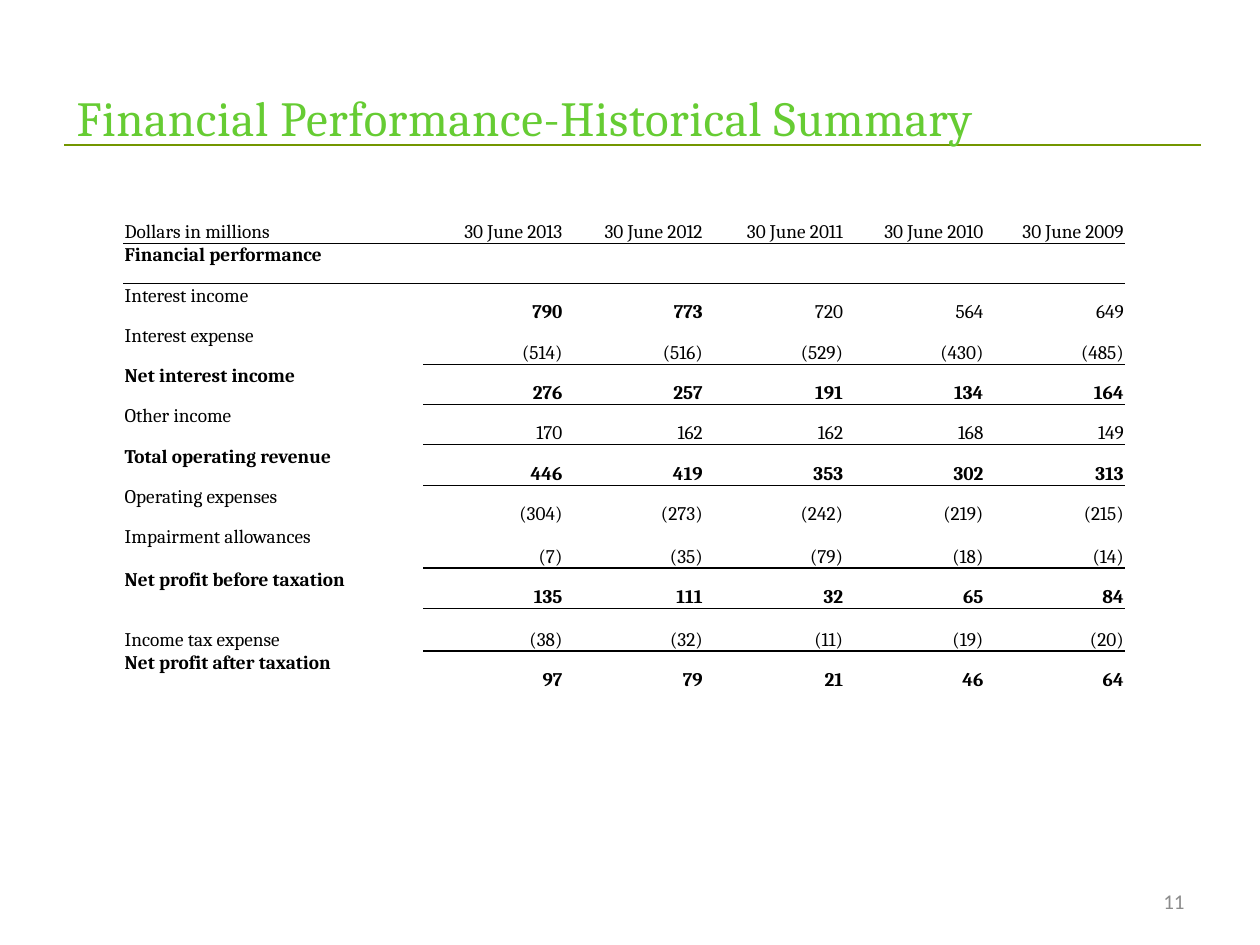
from dataclasses import dataclass

from lxml.etree import SubElement
from pptx import Presentation
from pptx.dml.color import RGBColor
from pptx.enum.shapes import MSO_CONNECTOR
from pptx.enum.text import MSO_ANCHOR, PP_ALIGN
from pptx.oxml.ns import qn
from pptx.util import Inches, Pt

COLORS = {"title": "66CC33", "rule": "739600", "ink": "000000", "page": "8C8C8C"}
WIDE, HIGH = Inches(10), Inches(7.5)
PLAIN = "{2D5ABB26-0587-4C30-8999-92F81FD0307C}"
COLS = [0.238] + [0.1114] * 5
ALL, LEAD, NONE = range(6), range(1, 3), range(0)


@dataclass
class Row:
    label: str
    vals: tuple = ("",) * 5
    bold: range = NONE
    rule: float = 0
    start: int = 1
    low: bool = False
    high: float = 0.32


@dataclass
class Label:
    text: str
    left: float
    top: float
    wide: float
    high: float
    size: float
    font: str
    color: str
    align: PP_ALIGN
    base: float = 0.05
    space: int = 0


ROWS = [
    Row("Dollars in millions", tuple(f"30 June {year}" for year in range(2013, 2008, -1)),
        rule=0.5, start=0, low=True, high=0.38),
    Row("Financial performance", bold=ALL),
    Row("Interest income", ("790", "773", "720", "564", "649"), LEAD),
    Row("Interest expense", ("(514)", "(516)", "(529)", "(430)", "(485)"), rule=0.5),
    Row("Net interest income", ("276", "257", "191", "134", "164"), ALL),
    Row("Other income", ("170", "162", "162", "168", "149"), rule=0.5),
    Row("Total operating revenue", ("446", "419", "353", "302", "313"), ALL),
    Row("Operating expenses", ("(304)", "(273)", "(242)", "(219)", "(215)")),
    Row("Impairment allowances", ("(7)", "(35)", "(79)", "(18)", "(14)"), rule=1, high=0.34),
    Row("Net profit before taxation", ("135", "111", "32", "65", "84"), ALL),
    Row("Income tax expense", ("(38)", "(32)", "(11)", "(19)", "(20)"),
        rule=1, low=True, high=0.34),
    Row("Net profit after taxation", ("97", "79", "21", "46", "64"), ALL),
]

LABELS = [
    Label("Financial Performance-Historical Summary", 0.051, 0.07, 0.898, 0.167,
          28, "Cambria", "title", PP_ALIGN.LEFT, 0.49, 40),
    Label("11", 0.717, 0.927, 0.233, 0.053, 12, "Calibri", "page", PP_ALIGN.RIGHT),
]


def across(share: float) -> int:
    return round(WIDE * share)


def down(share: float) -> int:
    return round(HIGH * share)


def style(font, name: str, size: float, color: str, bold: bool = False) -> None:
    font.name, font.size, font.bold = name, Pt(size), bold
    font.color.rgb = RGBColor.from_string(COLORS[color])


def draw_label(slide, item: Label) -> None:
    box = slide.shapes.add_textbox(across(item.left), down(item.top),
                                   across(item.wide), down(item.high))
    frame = box.text_frame
    frame.text = item.text
    frame.word_wrap = True
    frame.vertical_anchor = MSO_ANCHOR.MIDDLE
    frame.margin_bottom = Inches(item.base)
    line = frame.paragraphs[0]
    line.alignment = item.align
    for run in line.runs:
        style(run.font, item.font, item.size, item.color)
        if item.space:
            run.font._element.set("spc", str(item.space))


def draw_rule(slide) -> None:
    rule = slide.shapes.add_connector(MSO_CONNECTOR.STRAIGHT, across(0.051), down(0.1535),
                                      across(0.953), down(0.1535))
    rule.line.color.rgb = RGBColor.from_string(COLORS["rule"])
    rule.line.width = Pt(0.75)
    SubElement(rule._element.spPr, qn("a:effectLst"))


def draw_edge(cell, side: str, width: float) -> None:
    edge = SubElement(cell._tc.get_or_add_tcPr(), qn(f"a:{side}"), w=str(Pt(width)))
    fill = SubElement(edge, qn("a:solidFill"))
    SubElement(fill, qn("a:srgbClr"), val=COLORS["ink"])


def fill_cell(cell, text: str, col: int, row: Row) -> None:
    cell.margin_left = cell.margin_right = cell.margin_top = Inches(0.01)
    cell.margin_bottom = 0
    cell.vertical_anchor = MSO_ANCHOR.BOTTOM if col or row.low else MSO_ANCHOR.TOP
    cell.text_frame.text = text
    line = cell.text_frame.paragraphs[0]
    line.alignment = PP_ALIGN.RIGHT if col else PP_ALIGN.LEFT
    for run in line.runs:
        style(run.font, "Cambria", 11, "ink", col in row.bold)
    if not text:
        SubElement(line._p, qn("a:endParaRPr"), sz="1100")


def draw_table(slide, rows: list[Row]) -> None:
    frame = slide.shapes.add_table(len(rows), len(COLS), across(0.098), down(0.2067),
                                   across(sum(COLS)), Inches(sum(row.high for row in rows)))
    table = frame.table
    table.first_row = table.horz_banding = False
    table._tbl.tblPr.find(qn("a:tableStyleId")).text = PLAIN
    for col, share in zip(table.columns, COLS):
        col.width = across(share)
    above = Row("")
    for at, row in enumerate(rows):
        table.rows[at].height = Inches(row.high)
        for col, text in enumerate((row.label, *row.vals)):
            cell = table.cell(at, col)
            fill_cell(cell, text, col, row)
            for side, owner in (("lnT", above), ("lnB", row)):
                if owner.rule and col >= owner.start:
                    draw_edge(cell, side, owner.rule)
            cell.fill.background()
        above = row


def main() -> None:
    deck = Presentation()
    deck.slide_width, deck.slide_height = WIDE, HIGH
    slide = deck.slides.add_slide(deck.slide_layouts[6])
    draw_rule(slide)
    for item in LABELS:
        draw_label(slide, item)
    draw_table(slide, ROWS)
    deck.save("out.pptx")


if __name__ == "__main__":
    main()
